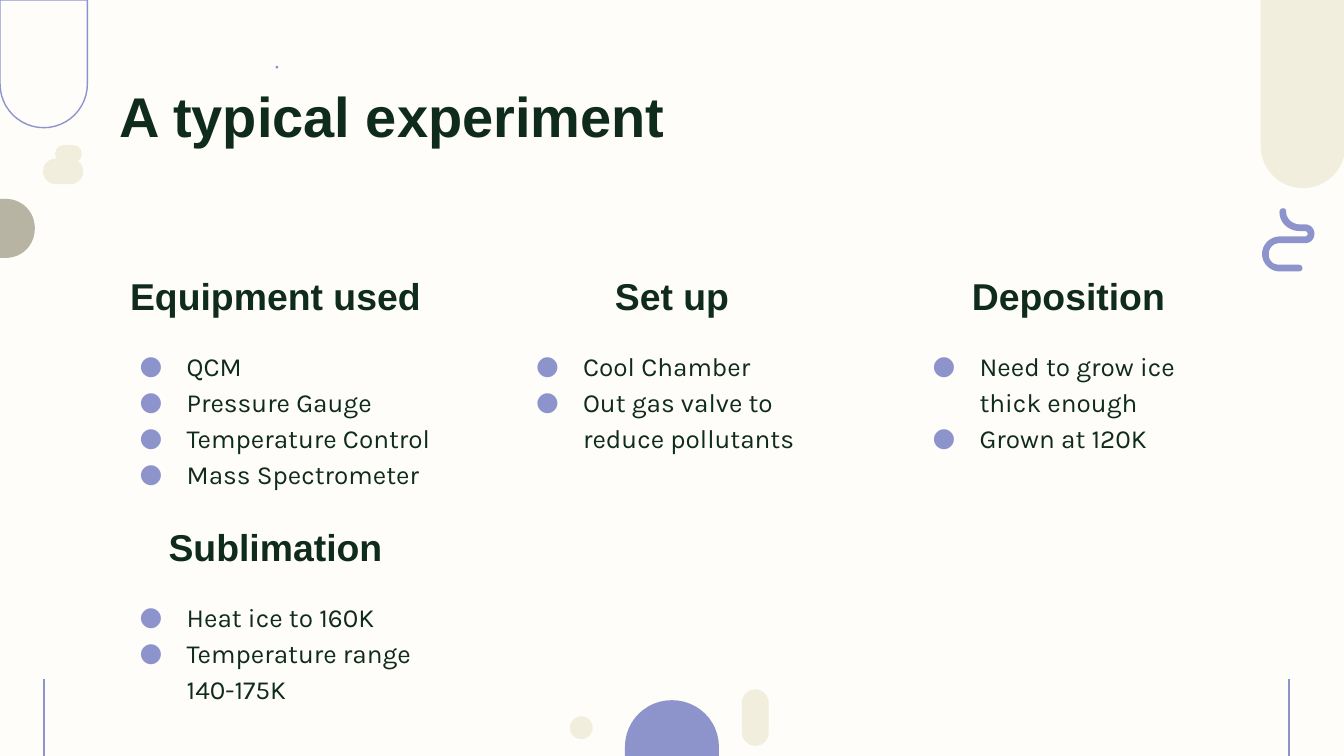
from lxml import etree
from pptx import Presentation
from pptx import util as u
from pptx.dml.color import RGBColor
from pptx.enum import shapes, text
from pptx.oxml.ns import qn

INK, LILAC, CREAM, STONE, PAPER = "0F2B1C", "8D94CC", "F1EEDD", "B7B4A3", "FFFDF9"
SHAPE = shapes.MSO_SHAPE

COLUMN_STEP, ROW_STEP = 2.95, 1.87
TOPICS = [
    (0, 0, "Equipment used", ["QCM", "Pressure Gauge", "Temperature Control", "Mass Spectrometer"]),
    (1, 0, "Set up", ["Cool Chamber", "Out gas valve to reduce pollutants"]),
    (2, 0, "Deposition", ["Need to grow ice thick enough", "Grown at 120K"]),
    (0, 1, "Sublimation", ["Heat ice to 160K", "Temperature range 140-175K"]),
]

SQUIGGLE = [
    (9.55, 1.55),
    (9.53, 1.55, 9.52, 1.56, 9.52, 1.58), (9.52, 1.66, 9.59, 1.72, 9.67, 1.72),
    (9.71, 1.72),
    (9.72, 1.72, 9.73, 1.73, 9.73, 1.74), (9.73, 1.75, 9.72, 1.76, 9.71, 1.76),
    (9.52, 1.76),
    (9.45, 1.76, 9.39, 1.82, 9.39, 1.89), (9.39, 1.96, 9.45, 2.02, 9.52, 2.02),
    (9.66, 2.02),
    (9.68, 2.02, 9.69, 2.01, 9.69, 2), (9.69, 1.98, 9.68, 1.97, 9.66, 1.97),
    (9.52, 1.97),
    (9.47, 1.97, 9.44, 1.94, 9.44, 1.89), (9.44, 1.85, 9.47, 1.81, 9.52, 1.81),
    (9.71, 1.81),
    (9.75, 1.81, 9.78, 1.78, 9.78, 1.74), (9.78, 1.7, 9.75, 1.67, 9.71, 1.67),
    (9.67, 1.67),
    (9.62, 1.67, 9.57, 1.63, 9.57, 1.58), (9.57, 1.56, 9.56, 1.55, 9.55, 1.55),
]
DOME = [
    (5, 5.21),
    (4.81, 5.21, 4.65, 5.36, 4.65, 5.56),
    (4.65, 5.63), (5.35, 5.63), (5.35, 5.56),
    (5.35, 5.36, 5.19, 5.21, 5, 5.21),
]
HALF_DISC = [
    (0.26, 1.7),
    (0.26, 1.58, 0.17, 1.48, 0.04, 1.48),
    (0, 1.48), (0, 1.92), (0.04, 1.92),
    (0.17, 1.92, 0.26, 1.82, 0.26, 1.7),
]


def rgb(color):
    return RGBColor.from_string(color)


def paint(sp, fill=None, line=None):
    sp.shadow.inherit = False
    if fill:
        sp.fill.solid()
        sp.fill.fore_color.rgb = rgb(fill)
    else:
        sp.fill.background()
    if line:
        sp.line.color.rgb = rgb(line)
        sp.line.width = u.Pt(0.75)
    else:
        sp.line.fill.background()


def add_preset(s, kind, box, fill=None, line=None, rounding=None, rotation=0):
    sp = s.shapes.add_shape(kind, *map(u.Inches, box))
    if rounding is not None:
        sp.adjustments[0] = rounding
    sp.rotation = rotation
    paint(sp, fill, line)


def bezier(points, steps=12):
    for i in range(1, steps + 1):
        t = i / steps
        weights = ((1 - t) ** 3, 3 * t * (1 - t) ** 2, 3 * t * t * (1 - t), t ** 3)
        yield tuple(sum(w * pt[axis] for w, pt in zip(weights, points)) for axis in (0, 1))


def add_outline(s, segments, fill):
    points = [segments[0]]
    for seg in segments[1:]:
        if len(seg) == 2:
            points.append(seg)
        else:
            points.extend(bezier([points[-1], seg[:2], seg[2:4], seg[4:]]))
    points = [(u.Inches(x), u.Inches(y)) for x, y in points]
    builder = s.shapes.build_freeform(*points[0])
    builder.add_line_segments(points[1:], close=True)
    paint(builder.convert_to_shape(), fill)


def add_rule(s, x, top, bottom):
    line = s.shapes.add_connector(shapes.MSO_CONNECTOR.STRAIGHT, *map(u.Inches, (x, top, x, bottom)))
    line.line.color.rgb = rgb(LILAC)
    line.line.width = u.Pt(1)
    etree.SubElement(line._element.spPr, qn("a:effectLst"))


def add_bullet(p):
    pPr = p._p.get_or_add_pPr()
    pPr.set("marL", str(u.Inches(0.5)))
    pPr.set("indent", str(u.Inches(-0.35)))
    color = etree.SubElement(pPr, qn("a:buClr"))
    etree.SubElement(color, qn("a:srgbClr"), val=LILAC)
    etree.SubElement(pPr, qn("a:buSzPts"), val="1400")
    etree.SubElement(pPr, qn("a:buFont"), typeface="Karla")
    etree.SubElement(pPr, qn("a:buChar"), char="●")


def add_text(s, lines, box, size, font="Arial", bold=True, align=text.PP_ALIGN.LEFT,
             anchor=text.MSO_ANCHOR.TOP, spacing=1.15, bullets=False):
    tf = s.shapes.add_textbox(*map(u.Inches, box)).text_frame
    tf.word_wrap = True
    tf.vertical_anchor = anchor
    tf.margin_left = tf.margin_right = tf.margin_top = tf.margin_bottom = u.Inches(0.1)
    for i, line in enumerate(lines):
        p = tf.add_paragraph() if i else tf.paragraphs[0]
        p.alignment = align
        p.line_spacing = spacing
        if bullets:
            add_bullet(p)
        r = p.add_run()
        r.text = line
        r.font.name = font
        r.font.size = u.Pt(size)
        r.font.bold = bold
        r.font.color.rgb = rgb(INK)


def add_topic(s, column, row, heading, items):
    left = 0.79 + column * COLUMN_STEP
    top = 1.7 + row * ROW_STEP
    add_text(s, items, (left, top + 0.77, 2.52, 0.69), 14, font="Karla", bold=False, bullets=True)
    add_text(s, [heading], (left, top, 2.52, 0.95), 20,
             align=text.PP_ALIGN.CENTER, anchor=text.MSO_ANCHOR.MIDDLE)


def add_decoration(s):
    arch, pill = SHAPE.ROUND_2_SAME_RECTANGLE, SHAPE.ROUNDED_RECTANGLE
    add_preset(s, arch, (9.38, 0, 0.63, 1.4), CREAM, rounding=0.5, rotation=180)
    add_preset(s, arch, (0, 0, 0.65, 0.95), line=LILAC, rounding=0.5, rotation=180)
    for box in ((5.52, 5.13, 0.2, 0.42), (0.41, 1.08, 0.2, 0.13), (0.32, 1.18, 0.3, 0.19)):
        add_preset(s, pill, box, CREAM, rounding=0.5)
    add_preset(s, SHAPE.OVAL, (4.24, 5.33, 0.17, 0.17), CREAM)
    add_preset(s, SHAPE.OVAL, (2.05, 0.49, 0.02, 0.02), LILAC)
    add_outline(s, SQUIGGLE, LILAC)
    add_outline(s, DOME, LILAC)
    add_outline(s, HALF_DISC, STONE)
    for x in (0.33, 9.59):
        add_rule(s, x, 5.05, 5.63)


def main():
    prs = Presentation()
    prs.slide_width = u.Inches(10)
    prs.slide_height = u.Inches(10 * 9 / 16)
    s = prs.slides.add_slide(prs.slide_layouts[6])
    s.background.fill.solid()
    s.background.fill.fore_color.rgb = rgb(PAPER)
    add_decoration(s)
    add_text(s, ["A typical experiment"], (0.79, 0.51, 8.43, 0.69), 30, spacing=1.0)
    for topic in TOPICS:
        add_topic(s, *topic)
    prs.save("out.pptx")


if __name__ == "__main__":
    main()
